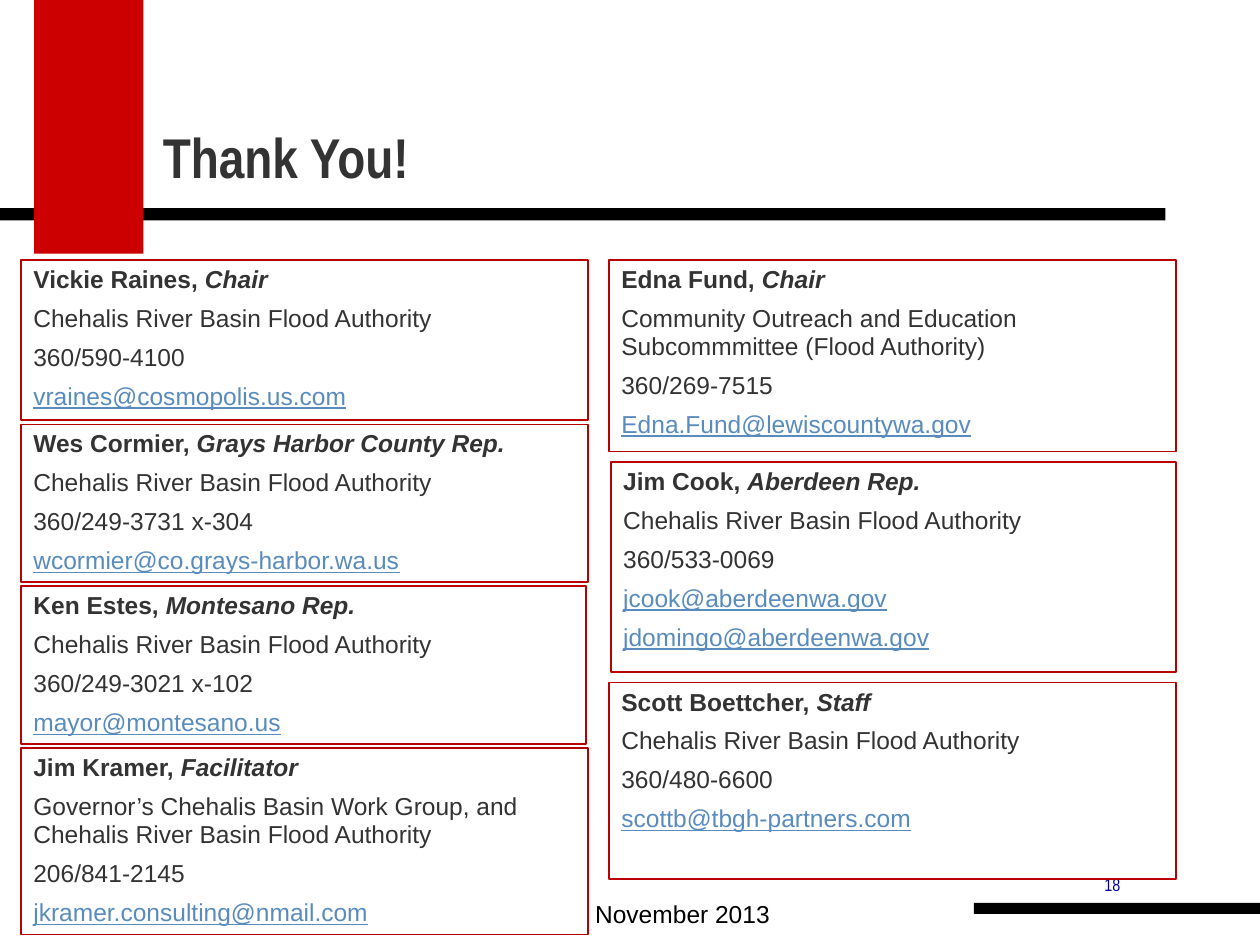
from dataclasses import dataclass

from pptx import Presentation
from pptx.dml.color import RGBColor
from pptx.enum.shapes import MSO_SHAPE
from pptx.enum.text import MSO_ANCHOR, PP_ALIGN
from pptx.slide import Slide
from pptx.text.text import Font
from pptx.util import Pt


@dataclass(frozen=True)
class Theme:
    black: str = "000000"
    red: str = "CC0000"
    border: str = "B90000"
    ink: str = "333333"
    link: str = "598BBD"
    page_number: str = "000099"
    body_font: str = "Arial"
    narrow_font: str = "Arial Narrow"
    title_size: float = 32
    body_size: float = 14
    page_number_size: float = 10
    line_spacing: float = 0.95
    paragraph_gap: float = 6.3


@dataclass(frozen=True)
class Box:
    left: float
    top: float
    width: float
    height: float

    def lengths(self) -> tuple[Pt, Pt, Pt, Pt]:
        return Pt(self.left), Pt(self.top), Pt(self.width), Pt(self.height)


@dataclass(frozen=True)
class Band:
    box: Box
    color: str


@dataclass(frozen=True)
class Label:
    text: str
    box: Box
    font: str
    size: float
    color: str
    bold: bool = False
    align: PP_ALIGN = PP_ALIGN.LEFT
    anchor: MSO_ANCHOR = MSO_ANCHOR.BOTTOM
    wrap: bool = True


@dataclass(frozen=True)
class Contact:
    name: str
    role: str
    organization: str
    phone: str
    emails: tuple[str, ...]
    box: Box


THEME = Theme()
AUTHORITY = "Chehalis River Basin Flood Authority"
LEFT_COLUMN, RIGHT_COLUMN, CARD_WIDTH, FIRST_ROW = 12, 348, 324, 148.5

BANDS = [
    Band(Box(0, 119, 666, 7), THEME.black),
    Band(Box(19.5, 0, 62.5, 145), THEME.red),
    Band(Box(556.5, 516, 163.5, 6.3), THEME.black),
]

LABELS = [
    Label("18", Box(624, 496, 24.5, 19.5), THEME.narrow_font,
          THEME.page_number_size, THEME.page_number,
          anchor=MSO_ANCHOR.TOP, wrap=False),
    Label("Thank You!", Box(86, 22, 612, 90), THEME.narrow_font,
          THEME.title_size, THEME.ink, bold=True),
    Label("November 2013", Box(276, 498, 228, 36), THEME.body_font,
          THEME.body_size, THEME.black, align=PP_ALIGN.CENTER),
]

CONTACTS = [
    # Left column
    Contact("Vickie Raines", "Chair", AUTHORITY, "360/590-4100",
            ("vraines@cosmopolis.us.com",),
            Box(LEFT_COLUMN, FIRST_ROW, CARD_WIDTH, 91.5)),
    Contact("Wes Cormier", "Grays Harbor County Rep.", AUTHORITY,
            "360/249-3731 x-304", ("wcormier@co.grays-harbor.wa.us",),
            Box(LEFT_COLUMN, 242.5, CARD_WIDTH, 90)),
    Contact("Ken Estes", "Montesano Rep.", AUTHORITY, "360/249-3021 x-102",
            ("mayor@montesano.us",),
            Box(LEFT_COLUMN, 335, CARD_WIDTH - 1, 90)),
    Contact("Jim Kramer", "Facilitator",
            f"Governor’s Chehalis Basin Work Group, and {AUTHORITY}",
            "206/841-2145", ("jkramer.consulting@nmail.com",),
            Box(LEFT_COLUMN, 427.5, CARD_WIDTH, 106.5)),
    # Right column
    Contact("Edna Fund", "Chair",
            "Community Outreach and Education Subcommmittee (Flood Authority)",
            "360/269-7515", ("Edna.Fund@lewiscountywa.gov",),
            Box(RIGHT_COLUMN, FIRST_ROW, CARD_WIDTH, 109.5)),
    Contact("Jim Cook", "Aberdeen Rep.", AUTHORITY, "360/533-0069",
            ("jcook@aberdeenwa.gov", "jdomingo@aberdeenwa.gov"),
            Box(RIGHT_COLUMN + 1, 264, CARD_WIDTH - 1, 120)),
    Contact("Scott Boettcher", "Staff", AUTHORITY, "360/480-6600",
            ("scottb@tbgh-partners.com",),
            Box(RIGHT_COLUMN, 390, CARD_WIDTH, 112.5)),
]


def style(font: Font, name: str, size: float, color: str,
          bold: bool = False) -> None:
    font.name = name
    font.size = Pt(size)
    font.bold = bold
    font.color.rgb = RGBColor.from_string(color)


def draw_band(slide: Slide, band: Band) -> None:
    bar = slide.shapes.add_shape(MSO_SHAPE.RECTANGLE, *band.box.lengths())
    bar.shadow.inherit = False
    bar.fill.solid()
    bar.fill.fore_color.rgb = RGBColor.from_string(band.color)
    bar.line.fill.background()


def draw_label(slide: Slide, label: Label) -> None:
    frame = slide.shapes.add_textbox(*label.box.lengths()).text_frame
    frame.word_wrap = label.wrap
    frame.vertical_anchor = label.anchor
    frame.text = label.text
    line = frame.paragraphs[0]
    line.alignment = label.align
    style(line.runs[0].font, label.font, label.size, label.color, label.bold)


def draw_contact(slide: Slide, contact: Contact) -> None:
    card = slide.shapes.add_shape(MSO_SHAPE.RECTANGLE, *contact.box.lengths())
    card.shadow.inherit = False
    card.fill.background()
    card.line.color.rgb = RGBColor.from_string(THEME.border)
    card.line.width = Pt(1)

    frame = card.text_frame
    frame.word_wrap = True
    frame.vertical_anchor = MSO_ANCHOR.TOP
    details = [contact.organization, contact.phone, *contact.emails]
    frame.text = "\n".join([f"{contact.name}, ", *details])
    for index, line in enumerate(frame.paragraphs):
        line.alignment = PP_ALIGN.LEFT
        line.line_spacing = THEME.line_spacing
        line.space_before = Pt(THEME.paragraph_gap if index else 0)
        is_email = line.text in contact.emails
        font = line.runs[0].font
        style(font, THEME.body_font, THEME.body_size,
              THEME.link if is_email else THEME.ink, bold=index == 0)
        font.underline = is_email

    # Role, in italics after the name
    role = frame.paragraphs[0].add_run()
    role.text = contact.role
    style(role.font, THEME.body_font, THEME.body_size, THEME.ink, bold=True)
    role.font.italic = True


def main() -> None:
    deck = Presentation()
    deck.slide_width, deck.slide_height = Pt(720), Pt(540)
    slide = deck.slides.add_slide(deck.slide_layouts[6])

    # Background bands
    for band in BANDS:
        draw_band(slide, band)
    # Page number, title and date
    for label in LABELS:
        draw_label(slide, label)
    # Contact cards
    for contact in CONTACTS:
        draw_contact(slide, contact)

    deck.save("out.pptx")


if __name__ == "__main__":
    main()
